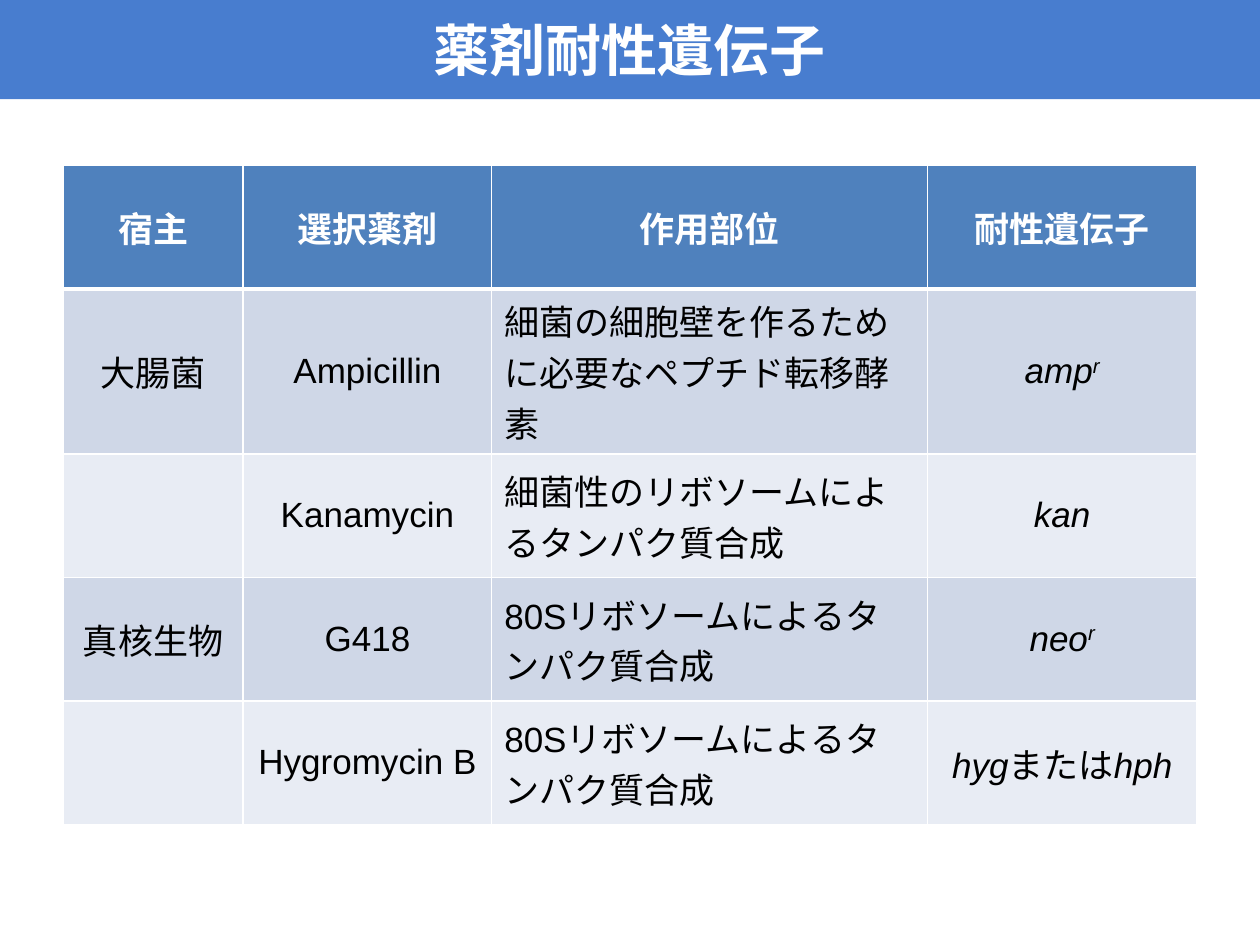
from lxml.etree import SubElement
from pptx import Presentation
from pptx.dml.color import RGBColor
from pptx.enum.shapes import MSO_SHAPE
from pptx.enum.text import MSO_ANCHOR, PP_ALIGN
from pptx.oxml.ns import qn
from pptx.util import Pt

WHITE = RGBColor(0xFF, 0xFF, 0xFF)
BLACK = RGBColor(0x00, 0x00, 0x00)
BAND_BLUE = RGBColor(0x48, 0x7D, 0xCF)
HEADER_BLUE = RGBColor(0x4F, 0x81, 0xBD)
ROW_FILLS = (RGBColor(0xCF, 0xD7, 0xE7), RGBColor(0xE8, 0xEC, 0xF4))

FONT = "Arial"
PLAIN, ITALIC, SUPERSCRIPT = "plain", "italic", "superscript"
COLUMN_WIDTHS = (103, 142, 249, 154)
ROW_HEIGHT = 70.6
SITE_COLUMN = 2

HEADERS = ("宿主", "選択薬剤", "作用部位", "耐性遺伝子")
ROWS = (
    ("大腸菌", "Ampicillin", "細菌の細胞壁を作るために必要なペプチド転移酵素",
     (("amp", ITALIC), ("r", SUPERSCRIPT))),
    ("", "Kanamycin", "細菌性のリボソームによるタンパク質合成",
     (("kan", ITALIC),)),
    ("真核生物", "G418", "80Sリボソームによるタンパク質合成",
     (("neo", ITALIC), ("r", SUPERSCRIPT))),
    ("", "Hygromycin B", "80Sリボソームによるタンパク質合成",
     (("hyg", ITALIC), ("または", PLAIN), ("hph", ITALIC))),
)


def style_paragraph(paragraph, size, color, bold, alignment):
    """Set the alignment and the shared font of a paragraph."""
    paragraph.alignment = alignment
    font = paragraph.font
    font.name, font.size, font.bold = FONT, Pt(size), bold
    font.color.rgb = color


def add_title_band(slide, left, top, width, height, title):
    """Draw the coloured band with the slide title."""
    band = slide.shapes.add_shape(
        MSO_SHAPE.RECTANGLE, Pt(left), Pt(top), Pt(width), Pt(height))
    band.shadow.inherit = False
    band.fill.solid()
    band.fill.fore_color.rgb = BAND_BLUE
    band.line.fill.background()
    frame = band.text_frame
    frame.word_wrap = True
    frame.vertical_anchor = MSO_ANCHOR.MIDDLE
    frame.text = title
    style_paragraph(frame.paragraphs[0], 32, WHITE, True, PP_ALIGN.CENTER)


def set_borders(cell, top, bottom):
    """Give a cell white borders, with the top and bottom widths in points."""
    properties = cell._tc.get_or_add_tcPr()
    for side, width in (("L", 1), ("R", 1), ("T", top), ("B", bottom)):
        line = SubElement(properties, qn(f"a:ln{side}"), w=str(Pt(width)))
        fill = SubElement(line, qn("a:solidFill"))
        SubElement(fill, qn("a:srgbClr"), val=str(WHITE))


def add_runs(paragraph, content):
    """Write a plain string or a sequence of styled pieces."""
    pieces = ((content, PLAIN),) if isinstance(content, str) else content
    for text, style in pieces:
        if not text:
            continue
        run = paragraph.add_run()
        run.text = text
        if style != PLAIN:
            run.font.italic = True
        if style == SUPERSCRIPT:
            run._r.get_or_add_rPr().set("baseline", "30000")


def fill_cell(cell, content, row, column):
    """Fill and format one cell of the gene table."""
    is_header = row == 0
    set_borders(cell, top=3 if row == 1 else 1, bottom=3 if is_header else 1)
    cell.fill.solid()
    cell.fill.fore_color.rgb = HEADER_BLUE if is_header else ROW_FILLS[(row - 1) % 2]
    cell.vertical_anchor = MSO_ANCHOR.MIDDLE
    paragraph = cell.text_frame.paragraphs[0]
    add_runs(paragraph, content)
    is_site = column == SITE_COLUMN and not is_header
    style_paragraph(paragraph, 20, WHITE if is_header else BLACK, is_header,
                    PP_ALIGN.LEFT if is_site else PP_ALIGN.CENTER)


def add_gene_table(slide, left, top):
    """Draw the table of selection drugs and resistance genes."""
    rows = (HEADERS,) + ROWS
    table = slide.shapes.add_table(
        len(rows), len(COLUMN_WIDTHS), Pt(left), Pt(top),
        Pt(sum(COLUMN_WIDTHS)), Pt(ROW_HEIGHT * len(rows))).table
    table.first_row = False
    table.horz_banding = False
    for column, width in zip(table.columns, COLUMN_WIDTHS):
        column.width = Pt(width)
    for row_index, contents in enumerate(rows):
        table.rows[row_index].height = Pt(ROW_HEIGHT)
        for column_index, content in enumerate(contents):
            fill_cell(table.cell(row_index, column_index), content,
                      row_index, column_index)


def main():
    """Build and save the presentation."""
    presentation = Presentation()
    presentation.slide_width, presentation.slide_height = Pt(720), Pt(540)
    slide = presentation.slides.add_slide(presentation.slide_layouts[6])
    add_title_band(slide, 0, 0, 720, 56.7, "薬剤耐性遺伝子")
    add_gene_table(slide, 36, 94.5)
    presentation.save("out.pptx")


if __name__ == "__main__":
    main()
